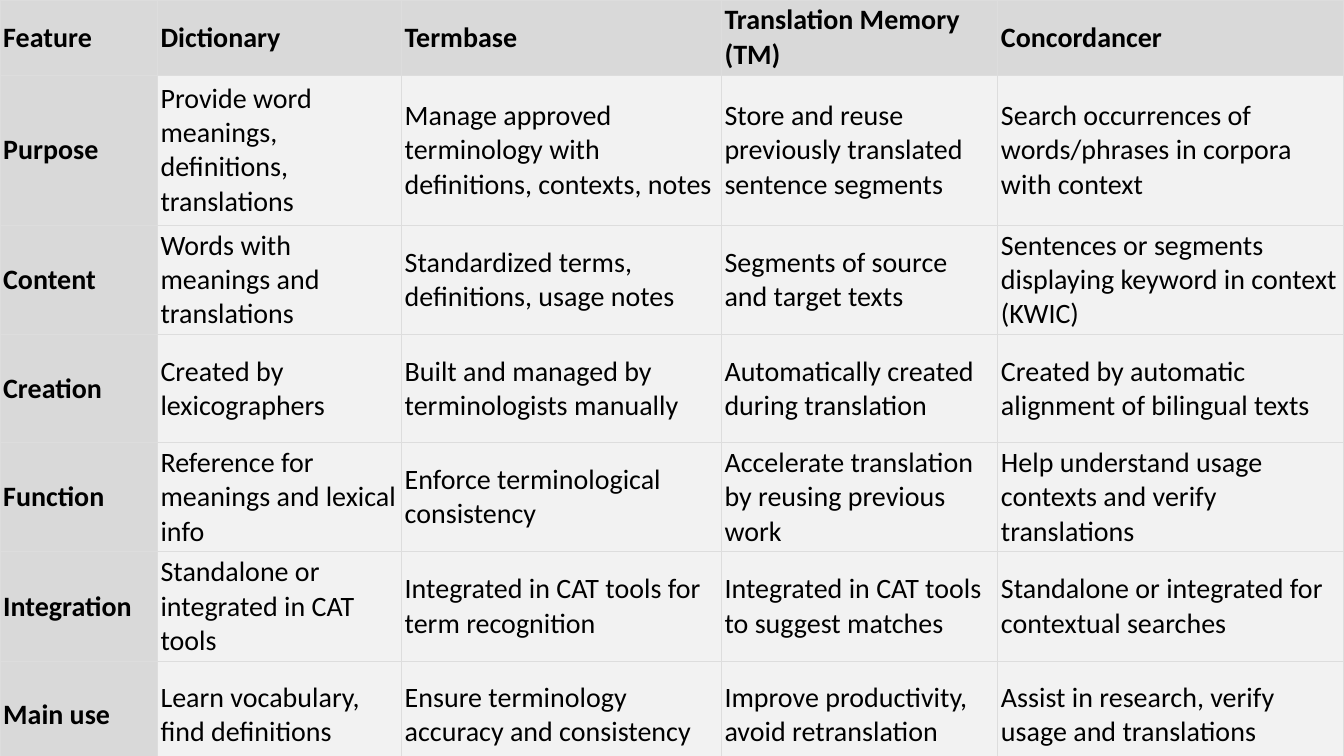
"""Build a slide comparing four translation resources."""
from lxml import etree
from pptx import Presentation
from pptx import util as u
from pptx.dml.color import RGBColor
from pptx.enum import text
from pptx.oxml import ns

BACKGROUND = RGBColor(0xF2, 0xF2, 0xF2)
HEADING = RGBColor(0xD9, 0xD9, 0xD9)
RULE = RGBColor(0xDD, 0xDD, 0xDD)
INK = RGBColor(0, 0, 0)

SLIDE_WIDTH, SLIDE_HEIGHT = u.Cm(33.87), u.Cm(19.05)
COLUMN_SHARES = (1.56, 2.42, 3.17, 2.74, 3.43)
ROW_SHARES = (0.65, 1.49) + (1.07,) * 5
INSET = u.Cm(0.08)

FEATURES = (
    ("Feature", "Dictionary", "Termbase", "Translation Memory (TM)", "Concordancer"),
    ("Purpose",
     "Provide word meanings, definitions, translations",
     "Manage approved terminology with definitions, contexts, notes",
     "Store and reuse previously translated sentence segments",
     "Search occurrences of words/phrases in corpora with context"),
    ("Content",
     "Words with meanings and translations",
     "Standardized terms, definitions, usage notes",
     "Segments of source and target texts",
     "Sentences or segments displaying keyword in context (KWIC)"),
    ("Creation",
     "Created by lexicographers",
     "Built and managed by terminologists manually",
     "Automatically created during translation",
     "Created by automatic alignment of bilingual texts"),
    ("Function",
     "Reference for meanings and lexical info",
     "Enforce terminological consistency",
     "Accelerate translation by reusing previous work",
     "Help understand usage contexts and verify translations"),
    ("Integration",
     "Standalone or integrated in CAT tools",
     "Integrated in CAT tools for term recognition",
     "Integrated in CAT tools to suggest matches",
     "Standalone or integrated for contextual searches"),
    ("Main use",
     "Learn vocabulary, find definitions",
     "Ensure terminology accuracy and consistency",
     "Improve productivity, avoid retranslation",
     "Assist in research, verify usage and translations"),
)


def add_borders(cell):
    """Draw a thin grey line on all four sides of a cell."""
    properties = cell._tc.get_or_add_tcPr()
    for side in ("a:lnL", "a:lnR", "a:lnT", "a:lnB"):
        line = etree.SubElement(properties, ns.qn(side), w=str(u.Pt(0.75)))
        fill = etree.SubElement(line, ns.qn("a:solidFill"))
        etree.SubElement(fill, ns.qn("a:srgbClr"), val=str(RULE))


def fill_cell(cell, wording, is_heading):
    """Write and format one cell."""
    cell.margin_left = cell.margin_right = INSET
    cell.margin_top = cell.margin_bottom = INSET
    cell.vertical_anchor = text.MSO_ANCHOR.MIDDLE
    add_borders(cell)
    if is_heading:
        cell.fill.solid()
        cell.fill.fore_color.rgb = HEADING
    else:
        cell.fill.background()
    cell.text_frame.text = wording
    font = cell.text_frame.paragraphs[0].runs[0].font
    font.name, font.size, font.bold = "Calibri", u.Pt(20), is_heading
    font.color.rgb = INK


def add_comparison(slide, left, top, width, height):
    """Place the feature table in the given box."""
    comparison = slide.shapes.add_table(
        len(FEATURES), len(FEATURES[0]), left, top, width, height).table
    comparison.horz_banding = False
    for column, share in zip(comparison.columns, COLUMN_SHARES):
        column.width = int(width * share / sum(COLUMN_SHARES))
    for row, share in zip(comparison.rows, ROW_SHARES):
        row.height = int(height * share / sum(ROW_SHARES))
    for r, feature in enumerate(FEATURES):
        for c, wording in enumerate(feature):
            fill_cell(comparison.cell(r, c), wording, r == 0 or c == 0)


def main():
    """Create the presentation and save it."""
    deck = Presentation()
    deck.slide_width, deck.slide_height = SLIDE_WIDTH, SLIDE_HEIGHT
    slide = deck.slides.add_slide(deck.slide_layouts.get_by_name("Blank"))
    slide.background.fill.solid()
    slide.background.fill.fore_color.rgb = BACKGROUND
    add_comparison(slide, 0, 0, SLIDE_WIDTH, SLIDE_HEIGHT)
    deck.save("out.pptx")


if __name__ == "__main__":
    main()
